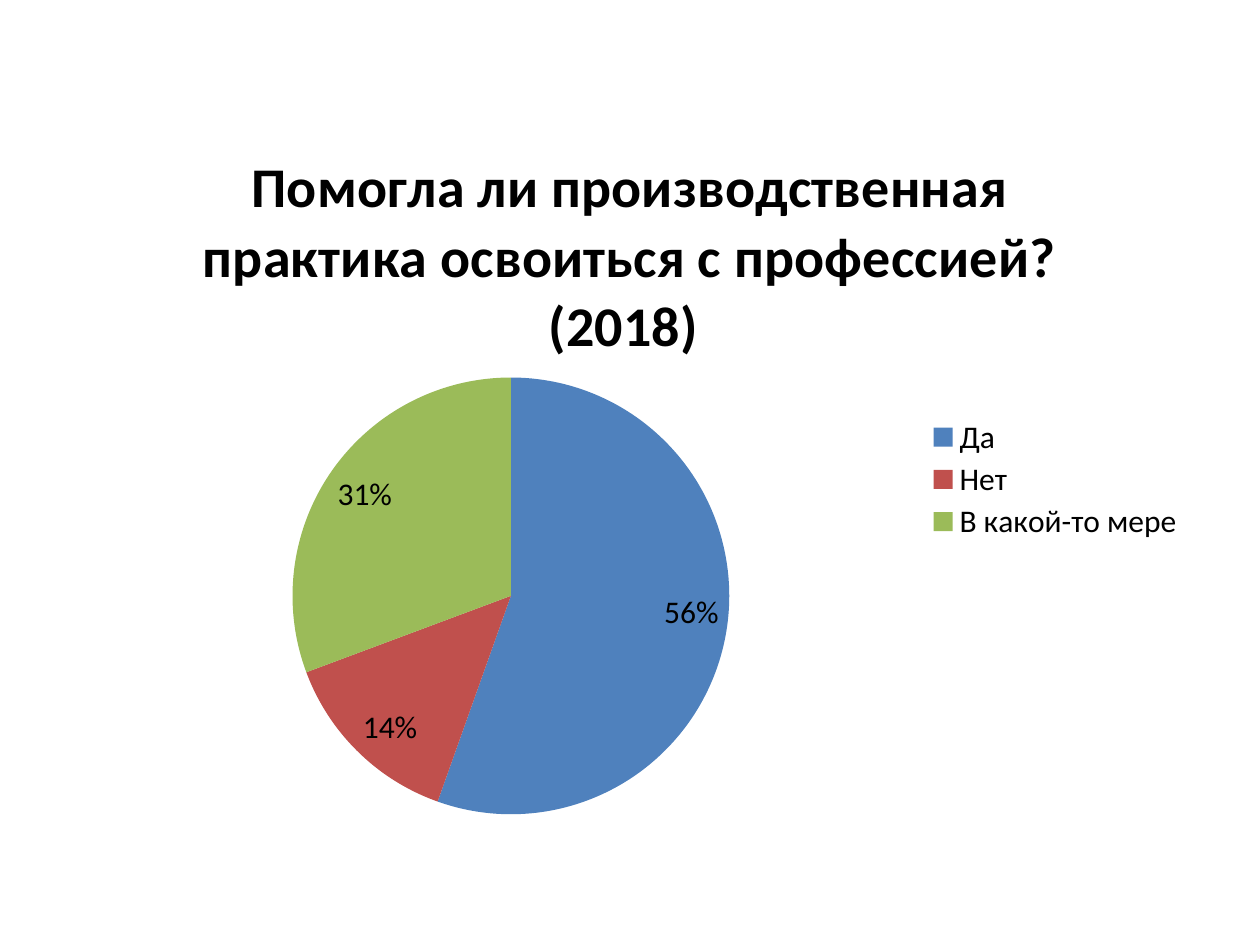
from typing import NamedTuple

from lxml.etree import SubElement
from pptx import Presentation
from pptx.chart.data import CategoryChartData
from pptx.dml.color import RGBColor
from pptx.enum.chart import XL_CHART_TYPE as ChartType
from pptx.enum.chart import XL_LABEL_POSITION as LabelPosition
from pptx.enum.chart import XL_LEGEND_POSITION as LegendPosition
from pptx.oxml.ns import qn
from pptx.util import Pt


class Answer(NamedTuple):
    label: str
    percent: int
    color: str


class Area(NamedTuple):
    """Position and size as fractions of the chart."""
    x: float
    y: float
    w: float
    h: float


TITLE = "Помогла ли производственная практика освоиться с профессией? (2018) "
FONT = "Calibri"
ANSWERS = [
    Answer("Да", 56, "4F81BD"),
    Answer("Нет", 14, "C0504D"),
    Answer("В какой-то мере", 31, "9BBB59"),
]
PIE_AREA = Area(0.2, 0.36, 0.39, 0.6)
LEGEND_AREA = Area(0.76, 0.41, 0.23, 0.18)


def rgb(color: str) -> RGBColor:
    return RGBColor.from_string(color)


def style_font(font, size: float, bold: bool = False) -> None:
    font.name = FONT
    font.size = Pt(size)
    font.bold = bold
    font.color.rgb = rgb("000000")


def place(element, area: Area, inner: bool = False) -> None:
    """Give a plot area or legend element a fixed layout."""
    layout = element.find(qn("c:layout"))
    if layout is None:
        layout = SubElement(element, qn("c:layout"))
        anchor = element.find(qn("c:legendPos"))
        if anchor is None:
            element.insert(0, layout)
        else:
            anchor.addnext(layout)
    manual = SubElement(layout, qn("c:manualLayout"))
    settings = [("layoutTarget", "inner")] if inner else []
    settings += [("xMode", "edge"), ("yMode", "edge")]
    settings += [(name, str(value)) for name, value in area._asdict().items()]
    for name, value in settings:
        SubElement(manual, qn(f"c:{name}")).set("val", value)


def add_answer_pie(slide, answers: list[Answer]) -> None:
    data = CategoryChartData(number_format='0"%"')
    data.categories = [answer.label for answer in answers]
    data.add_series("Series 1", [answer.percent for answer in answers])
    chart = slide.shapes.add_chart(
        ChartType.PIE, Pt(36), Pt(66), Pt(648), Pt(416), data
    ).chart
    style_font(chart.font, 18)

    chart.has_title = True
    title = chart.chart_title
    title.include_in_layout = False
    title.text_frame.text = TITLE
    style_font(title.text_frame.paragraphs[0].font, 32, bold=True)

    chart.has_legend = True
    chart.legend.position = LegendPosition.RIGHT
    chart.legend.include_in_layout = False
    style_font(chart.legend.font, 18)

    plot = chart.plots[0]
    plot.vary_by_categories = True
    plot.has_data_labels = True
    labels = plot.data_labels
    labels.show_value = True
    labels.show_percentage = False
    labels.number_format = '0"%"'
    labels.number_format_is_linked = False
    labels.position = LabelPosition.INSIDE_END
    style_font(labels.font, 18)
    for index, answer in enumerate(answers):
        fill = plot.series[0].points[index].format.fill
        fill.solid()
        fill.fore_color.rgb = rgb(answer.color)

    chart_element = chart.element.find(qn("c:chart"))
    place(chart_element.find(qn("c:plotArea")), PIE_AREA, inner=True)
    place(chart_element.find(qn("c:legend")), LEGEND_AREA)


def main() -> None:
    presentation = Presentation()
    presentation.slide_width = Pt(720)
    presentation.slide_height = Pt(540)
    slide = presentation.slides.add_slide(presentation.slide_layouts[6])
    add_answer_pie(slide, ANSWERS)
    presentation.save("out.pptx")


if __name__ == "__main__":
    main()
